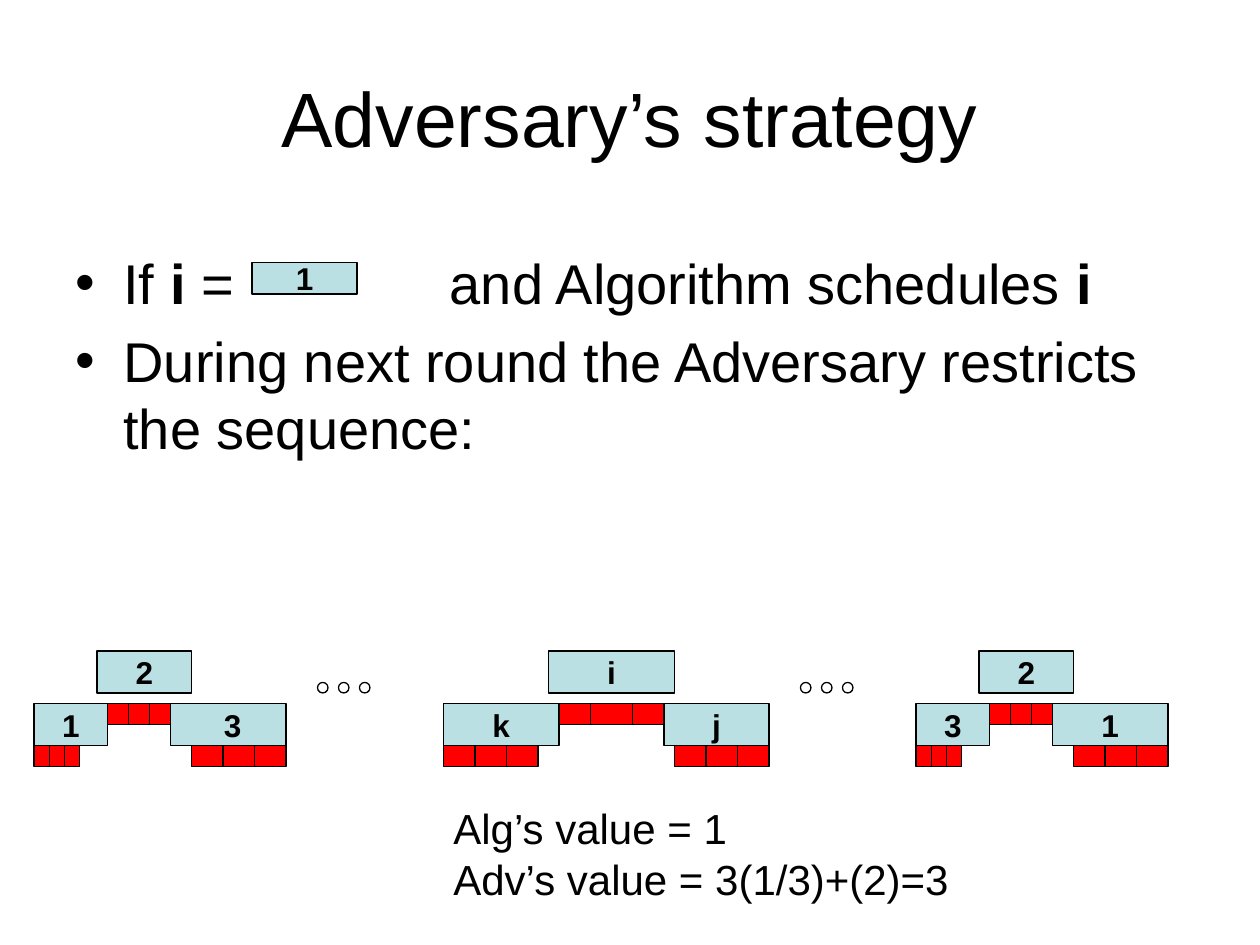
"""Build the slide on the adversary's strategy with three schedule clusters."""
import pptx
import pptx.util
import pptx.dml.color
import pptx.enum.shapes
import pptx.enum.text
import pptx.oxml.ns
import lxml.etree

BLACK = pptx.dml.color.RGBColor(0, 0, 0)
WHITE = pptx.dml.color.RGBColor(255, 255, 255)
RED = pptx.dml.color.RGBColor(255, 0, 0)
PALE_BLUE = pptx.dml.color.RGBColor(0xBB, 0xE0, 0xE3)
PROCESS = pptx.enum.shapes.MSO_SHAPE.FLOWCHART_PROCESS
CIRCLE = pptx.enum.shapes.MSO_SHAPE.FLOWCHART_CONNECTOR
UNIT = pptx.util.Inches(1) / 12
ORIGIN = pptx.util.Inches(0.02)
TOP_ROW, DOT_ROW, MIDDLE_ROW, BOTTOM_ROW = 62, 65, 67, 71

presentation = pptx.Presentation()
presentation.slide_width = pptx.util.Inches(10)
presentation.slide_height = pptx.util.Inches(7.5)
width, height = presentation.slide_width, presentation.slide_height
slide = presentation.slides.add_slide(presentation.slide_layouts[1])


def add_run(paragraph, text, size, bold=False):
    run = paragraph.add_run()
    run.text = text
    run.font.name = "Arial"
    run.font.size = pptx.util.Pt(size)
    run.font.bold = bold
    run.font.color.rgb = BLACK


def add_block(column, row, columns, rows, color, label="", kind=PROCESS):
    shape = slide.shapes.add_shape(
        kind, round(ORIGIN + column * UNIT), round(row * UNIT),
        round(columns * UNIT), round(rows * UNIT))
    shape.shadow.inherit = False
    shape.fill.solid()
    shape.fill.fore_color.rgb = color
    shape.line.color.rgb = BLACK
    shape.line.width = pptx.util.Pt(0.75)
    if label:
        frame = shape.text_frame
        frame.word_wrap = False
        frame.vertical_anchor = pptx.enum.text.MSO_ANCHOR.MIDDLE
        frame.paragraphs[0].alignment = pptx.enum.text.PP_ALIGN.CENTER
        add_run(frame.paragraphs[0], label, 18, True)


title = slide.shapes.title
title.left, title.top = round(width * 0.05), round(height * 0.04)
title.width, title.height = round(width * 0.9), round(height / 6)
title.text_frame.vertical_anchor = pptx.enum.text.MSO_ANCHOR.MIDDLE
title.text_frame.paragraphs[0].alignment = pptx.enum.text.PP_ALIGN.CENTER
add_run(title.text_frame.paragraphs[0], "Adversary’s strategy", 44)

body = slide.placeholders[1]
body.left, body.top = round(width * 0.05), round(height * 0.256)
body.width, body.height = round(width * 0.9), round(height * 0.31)
body.text_frame.auto_size = pptx.enum.text.MSO_AUTO_SIZE.NONE
bullets = [
    [("If ", False), ("i", True), (" =\tand Algorithm schedules ", False), ("i", True)],
    [("During next round the Adversary restricts the sequence:", False)],
]
for index, runs in enumerate(bullets):
    paragraph = body.text_frame.paragraphs[0] if index == 0 else body.text_frame.add_paragraph()
    properties = paragraph._p.get_or_add_pPr()
    properties.set("marL", str(pptx.util.Inches(0.38)))
    properties.set("indent", str(pptx.util.Inches(-0.38)))
    if index == 0:
        tabs = lxml.etree.SubElement(properties, pptx.oxml.ns.qn("a:tabLst"))
        lxml.etree.SubElement(tabs, pptx.oxml.ns.qn("a:tab"),
                              pos=str(pptx.util.Inches(2.97)), algn="l")
    for text, bold in runs:
        add_run(paragraph, text, 32, bold)

add_block(23.76, 25, 10, 3, PALE_BLUE, "1")

values = slide.shapes.add_textbox(
    round(width * 0.35), round(height * 0.843), round(width * 0.414), round(height * 0.12))
values.text_frame.word_wrap = False
for index, text in enumerate(["Alg’s value = 1", "Adv’s value = 3(1/3)+(2)=3"]):
    paragraph = values.text_frame.paragraphs[0] if index == 0 else values.text_frame.add_paragraph()
    add_run(paragraph, text, 24)

side_blocks = [(0, 7), (6, 9), (13, 11)]
side_strips = [(0, [1.45] * 3), (7, [2] * 3), (15, [3] * 3)]
middle_blocks = [(0, 11), (10, 12), (21, 10)]
middle_strips = [(0, [3] * 3), (11, [3, 4, 3]), (22, [3] * 3)]
clusters = [
    (3, ["1", "2", " 3"], side_blocks, side_strips),
    (42, ["k", "i", "j"], middle_blocks, middle_strips),
    (87, ["3", "2", "1"], side_blocks, side_strips),
]
block_rows = [MIDDLE_ROW, TOP_ROW, MIDDLE_ROW]
strip_rows = [BOTTOM_ROW, MIDDLE_ROW, BOTTOM_ROW]
for start, labels, blocks, strips in clusters:
    for label, row, (offset, columns) in zip(labels, block_rows, blocks):
        add_block(start + offset, row, columns, 4, PALE_BLUE, label)
    for row, (offset, pieces) in zip(strip_rows, strips):
        for index, columns in enumerate(pieces):
            add_block(start + offset + sum(pieces[:index]), row, columns, 2, RED)

for start in (30, 76):
    for step in range(3):
        add_block(start + 2 * step, DOT_ROW, 1, 1, WHITE, kind=CIRCLE)

presentation.save("out.pptx")
